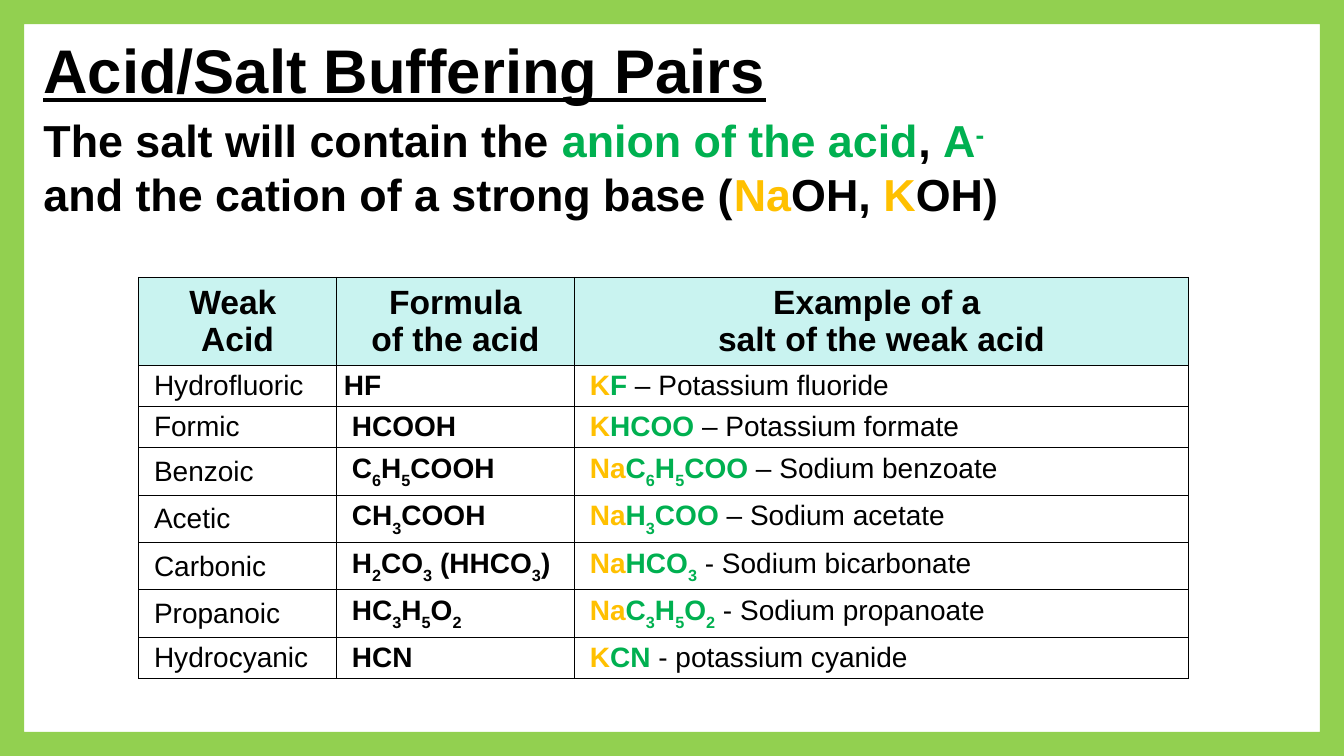
from itertools import groupby

from lxml import etree
from pptx import Presentation
from pptx.dml.color import RGBColor
from pptx.enum.shapes import MSO_SHAPE
from pptx.enum.text import MSO_ANCHOR, PP_ALIGN
from pptx.oxml.ns import qn
from pptx.util import Pt

FRAME = MSO_SHAPE.FRAME
MIDDLE = MSO_ANCHOR.MIDDLE
LEFT, CENTER = PP_ALIGN.LEFT, PP_ALIGN.CENTER

BLACK, WHITE = "000000", "FFFFFF"
GOLD, GREEN, LIME, AQUA = "FFC000", "00B050", "92D050", "C9F3F0"
SLIDE_W, SLIDE_H = 960, 540

HEADERS = ["Weak \vAcid", "Formula\nof the acid", "Example of a \vsalt of the weak acid"]
# Acid, formula, cation of the salt, anion of the salt, name of the salt
PAIRS = [
    ("Hydrofluoric", "HF", "K", "F", " – Potassium fluoride"),
    ("Formic", "HCOOH", "K", "HCOO", " – Potassium formate"),
    ("Benzoic", "C6H5COOH", "Na", "C6H5COO", " – Sodium benzoate"),
    ("Acetic", "CH3COOH", "Na", "H3COO", " – Sodium acetate"),
    ("Carbonic", "H2CO3 (HHCO3)", "Na", "HCO3", " - Sodium bicarbonate"),
    ("Propanoic", "HC3H5O2", "Na", "C3H5O2", " - Sodium propanoate"),
    ("Hydrocyanic", "HCN", "K", "CN", " - potassium cyanide"),
]
COL_WIDTHS = [141.3, 170, 438.7]
ROW_HEIGHTS = [60.7, 29.3, 29.3, 34.1, 33.6, 33.6, 33, 29.3]


def rgb(value):
    return RGBColor.from_string(value)


def add_run(p, text, size, color=BLACK, baseline=0, **formats):
    r = p.add_run()
    r.text = text
    for name, value in {"name": "Arial", "size": Pt(size), "bold": True, **formats}.items():
        setattr(r.font, name, value)
    r.font.color.rgb = rgb(color)
    if baseline:
        r.font._element.set("baseline", str(baseline * 1000))


def add_formula(p, formula, color=BLACK):
    """Write a bold formula with its digits as subscripts."""
    for is_digit, chars in groupby(formula, str.isdigit):
        add_run(p, "".join(chars), 20, color, -30 if is_digit else 0)


def add_text(s, left, top, width, height):
    tf = s.shapes.add_textbox(Pt(left), Pt(top), Pt(width), Pt(height)).text_frame
    tf.word_wrap = True
    return tf.paragraphs[0]


def add_lines(p, text, size, **formats):
    """Write text with a line break at each vertical tab."""
    for i, line in enumerate(text.split("\v")):
        if i:
            p.add_line_break()
        add_run(p, line, size, **formats)


def set_borders(cell):
    tc_pr = cell._tc.get_or_add_tcPr()
    for i, side in enumerate(("lnL", "lnR", "lnT", "lnB")):
        ln = etree.Element(qn(f"a:{side}"), w=str(Pt(0.75)))
        fill = etree.SubElement(ln, qn("a:solidFill"))
        etree.SubElement(fill, qn("a:srgbClr"), val=BLACK)
        tc_pr.insert(i, ln)


def format_cell(cell, fill, indent):
    margins = {"margin_left": indent, "margin_right": 5.4, "margin_top": 2.7, "margin_bottom": 2.7}
    for name, value in margins.items():
        setattr(cell, name, Pt(value))
    cell.vertical_anchor = MIDDLE
    cell.fill.solid()
    cell.fill.fore_color.rgb = rgb(fill)
    set_borders(cell)
    return cell.text_frame


def add_pairs_table(s):
    shape = s.shapes.add_table(len(ROW_HEIGHTS), len(COL_WIDTHS), Pt(99), Pt(198),
                               Pt(sum(COL_WIDTHS)), Pt(sum(ROW_HEIGHTS)))
    table = shape.table
    for column, width in zip(table.columns, COL_WIDTHS):
        column.width = Pt(width)
    for row, height in zip(table.rows, ROW_HEIGHTS):
        row.height = Pt(height)

    # Header row
    for col, header in enumerate(HEADERS):
        tf = format_cell(table.cell(0, col), AQUA, 5.4)
        for i, text in enumerate(header.split("\n")):
            p = tf.add_paragraph() if i else tf.paragraphs[0]
            p.alignment = CENTER
            add_lines(p, text, 24)

    # One row for each acid and its salt
    for row, (acid, formula, cation, anion, salt) in enumerate(PAIRS, 1):
        indents = (11, 5.4 if formula == "HF" else 11, 11)
        cells = [format_cell(table.cell(row, col), WHITE, indent).paragraphs[0]
                 for col, indent in enumerate(indents)]
        for p in cells:
            p.alignment = LEFT
        add_run(cells[0], acid, 20, bold=False)
        add_formula(cells[1], formula)
        add_formula(cells[2], cation, GOLD)
        add_formula(cells[2], anion, GREEN)
        add_run(cells[2], salt, 20, bold=False)


def add_frame(s):
    shape = s.shapes.add_shape(FRAME, 0, 0, Pt(SLIDE_W), Pt(SLIDE_H))
    shape.adjustments[0] = 0.032
    shape.shadow.inherit = False
    shape.fill.solid()
    shape.fill.fore_color.rgb = rgb(LIME)
    shape.line.fill.background()


def main():
    prs = Presentation()
    prs.slide_width, prs.slide_height = Pt(SLIDE_W), Pt(SLIDE_H)
    s = prs.slides.add_slide(prs.slide_layouts[6])

    # Title
    p = add_text(s, 24, 25.2, 648, 42)
    p.line_spacing = 0.9
    add_run(p, "Acid/Salt Buffering Pairs", 44, underline=True)

    add_pairs_table(s)

    # Rule for the salt
    p = add_text(s, 24, 77, 900, 85)
    for text, color in (("The salt will contain the ", BLACK), ("anion of the acid", GREEN),
                        (", ", BLACK), ("A", GREEN)):
        add_run(p, text, 32, color)
    add_run(p, "-", 32, GREEN, 30)
    p.add_line_break()
    for text, color in (("and the cation of a strong base (", BLACK), ("Na", GOLD),
                        ("OH, ", BLACK), ("K", GOLD), ("OH)", BLACK)):
        add_run(p, text, 32, color)

    add_frame(s)
    prs.save("out.pptx")


if __name__ == "__main__":
    main()
